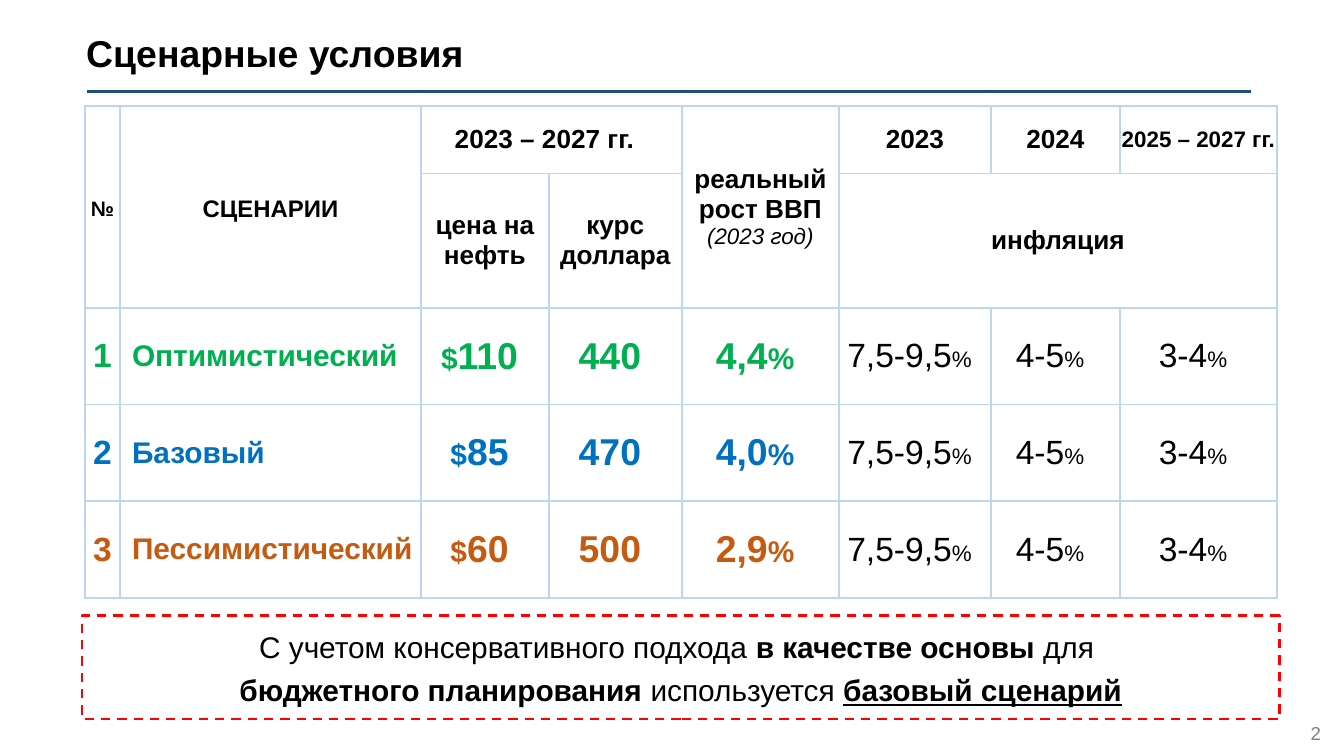
from lxml import etree
from pptx import Presentation
from pptx.dml.color import RGBColor
from pptx.enum.dml import MSO_LINE
from pptx.enum.shapes import MSO_CONNECTOR, MSO_SHAPE
from pptx.enum.text import MSO_ANCHOR, MSO_AUTO_SIZE, PP_ALIGN
from pptx.oxml.ns import qn
from pptx.util import Pt

LEFT, CENTER = PP_ALIGN.LEFT, PP_ALIGN.CENTER
MIDDLE = MSO_ANCHOR.MIDDLE
C = {"black": "000000", "white": "FFFFFF", "gray": "808080", "navy": "1F4E79",
     "grid": "BDD7EE", "red": "FF0000", "green": "00B050", "blue": "0070C0",
     "orange": "C55A11"}


def write(p, text, size=14, color="black", bold=False, italic=False,
          underline=False, small_caps=False):
    r = p.add_run()
    r.text = text
    f = r.font
    f.name, f.size, f.bold, f.italic = "Arial", Pt(size), bold, italic
    f.underline = underline
    f.color.rgb = RGBColor.from_string(C[color])
    if small_caps:
        r._r.get_or_add_rPr().set("cap", "small")


def fill_cell(cell, runs, align=CENTER, left=0, right=0):
    cell.vertical_anchor = MIDDLE
    cell.margin_left, cell.margin_right = Pt(left), Pt(right)
    cell.margin_top = cell.margin_bottom = 0
    p = cell.text_frame.paragraphs[0]
    p.alignment = align
    for text, fmt in runs:
        write(p, text, **fmt)


prs = Presentation()
prs.slide_width, prs.slide_height = Pt(720), Pt(405)
s = prs.slides.add_slide(prs.slide_layouts[5])

# Title
title = s.shapes.title
title.left, title.top, title.width, title.height = Pt(39), Pt(17.3), Pt(274), Pt(24.5)
tf = title.text_frame
tf.auto_size, tf.vertical_anchor = MSO_AUTO_SIZE.NONE, MIDDLE
p = tf.paragraphs[0]
p.alignment, p.line_spacing = LEFT, 0.9
write(p, "Сценарные условия", size=20, bold=True)

# Line under the title
rule = s.shapes.add_connector(MSO_CONNECTOR.STRAIGHT, Pt(46.8), Pt(49), Pt(670.3), Pt(49))
rule.line.color.rgb = RGBColor.from_string(C["navy"])
rule.line.width = Pt(1.5)
etree.SubElement(rule._element.spPr, qn("a:effectLst"))

# Table grid
widths = [18.7, 161.3, 68.4, 71.3, 84.2, 81.4, 69.1, 84.2]
heights = [36, 72, 51.8, 51.8, 51.8]
table = s.shapes.add_table(len(heights), len(widths), Pt(45.6), Pt(56.9),
                           Pt(sum(widths)), Pt(sum(heights))).table
table.first_row = table.horz_banding = False
for column, width in zip(table.columns, widths):
    column.width = Pt(width)
for row, height in zip(table.rows, heights):
    row.height = Pt(height)
for i, row in enumerate(table.rows):
    for cell in row.cells:
        tcPr = cell._tc.get_or_add_tcPr()
        for side in ("a:lnL", "a:lnR", "a:lnT", "a:lnB"):
            ln = etree.SubElement(tcPr, qn(side), w=str(Pt(1)))
            solid = etree.SubElement(ln, qn("a:solidFill"))
            etree.SubElement(solid, qn("a:srgbClr"), val=C["grid"])
        if i < 2:
            cell.fill.background()
        else:
            cell.fill.solid()
            cell.fill.fore_color.rgb = RGBColor.from_string(C["white"])

# Header: row, column, last row, last column, runs, right margin
head = dict(bold=True)
headers = [
    (0, 0, 1, 0, [("№", dict(head, small_caps=True))], 0),
    (0, 1, 1, 1, [("сценарии", dict(head, size=16, small_caps=True))], 0),
    (0, 2, 0, 3, [("2023 – 2027 гг.", head)], 7.5),
    (0, 4, 1, 4, [("реальный рост ВВП ", head),
                  ("(2023 год)", dict(size=12, italic=True))], 0),
    (0, 5, 0, 5, [("2023", head)], 0),
    (0, 6, 0, 6, [("2024", head)], 0),
    (0, 7, 0, 7, [("2025 – 2027 гг.", dict(head, size=12))], 0),
    (1, 2, 1, 2, [("цена на нефть", head)], 0),
    (1, 3, 1, 3, [("курс доллара", head)], 0),
    (1, 5, 1, 7, [("инфляция", head)], 0),
]
for row, col, last_row, last_col, runs, right in headers:
    cell = table.cell(row, col)
    if (row, col) != (last_row, last_col):
        cell.merge(table.cell(last_row, last_col))
    fill_cell(cell, runs, right=right)

# Scenario rows
scenarios = [("Оптимистический", "green", "110", "440", "4,4"),
             ("Базовый", "blue", "85", "470", "4,0"),
             ("Пессимистический", "orange", "60", "500", "2,9")]
inflation = ["7,5-9,5", "4-5", "3-4"]
for n, (name, color, oil, rate, growth) in enumerate(scenarios, 1):
    cells = table.rows[n + 1].cells
    mark = dict(color=color, bold=True, size=16)
    big = dict(mark, size=20)
    fill_cell(cells[0], [(str(n), dict(mark, size=18))])
    fill_cell(cells[1], [(name, mark)], align=LEFT, left=6.5)
    fill_cell(cells[2], [("$", mark), (oil, big)], right=5.8)
    fill_cell(cells[3], [(rate, big)], right=5.8)
    fill_cell(cells[4], [(growth, big), ("%", mark)], right=5.8)
    for col, value in enumerate(inflation, 5):
        fill_cell(cells[col], [(value, dict(size=18)), ("%", dict(size=12))], right=5.8)

# Conclusion box
sp = s.shapes.add_shape(MSO_SHAPE.RECTANGLE, Pt(43.9), Pt(329.8), Pt(641.5), Pt(55.4))
sp.shadow.inherit = False
sp.fill.background()
sp.line.color.rgb = RGBColor.from_string(C["red"])
sp.line.width = Pt(1.25)
sp.line.dash_style = MSO_LINE.DASH
tf = sp.text_frame
tf.word_wrap, tf.vertical_anchor = True, MIDDLE
tf.margin_left = tf.margin_right = 0
tf.margin_top, tf.margin_bottom = Pt(2.9), Pt(5.8)
conclusion = [
    [("С учетом консервативного подхода ", {}), ("в качестве основы ", head), ("для ", {})],
    [("бюджетного планирования ", head), ("используется ", {}),
     ("базовый сценарий", dict(head, underline=True))],
]
for i, runs in enumerate(conclusion):
    p = tf.add_paragraph() if i else tf.paragraphs[0]
    p.alignment, p.line_spacing = CENTER, 1.2
    for text, fmt in runs:
        write(p, text, size=16, **fmt)

# Slide number
tf = s.shapes.add_textbox(Pt(690.5), Pt(380.9), Pt(28.8), Pt(23.8)).text_frame
tf.word_wrap, tf.vertical_anchor = True, MIDDLE
p = tf.paragraphs[0]
p.alignment = CENTER
write(p, "2", size=10, color="gray")

prs.save("out.pptx")
